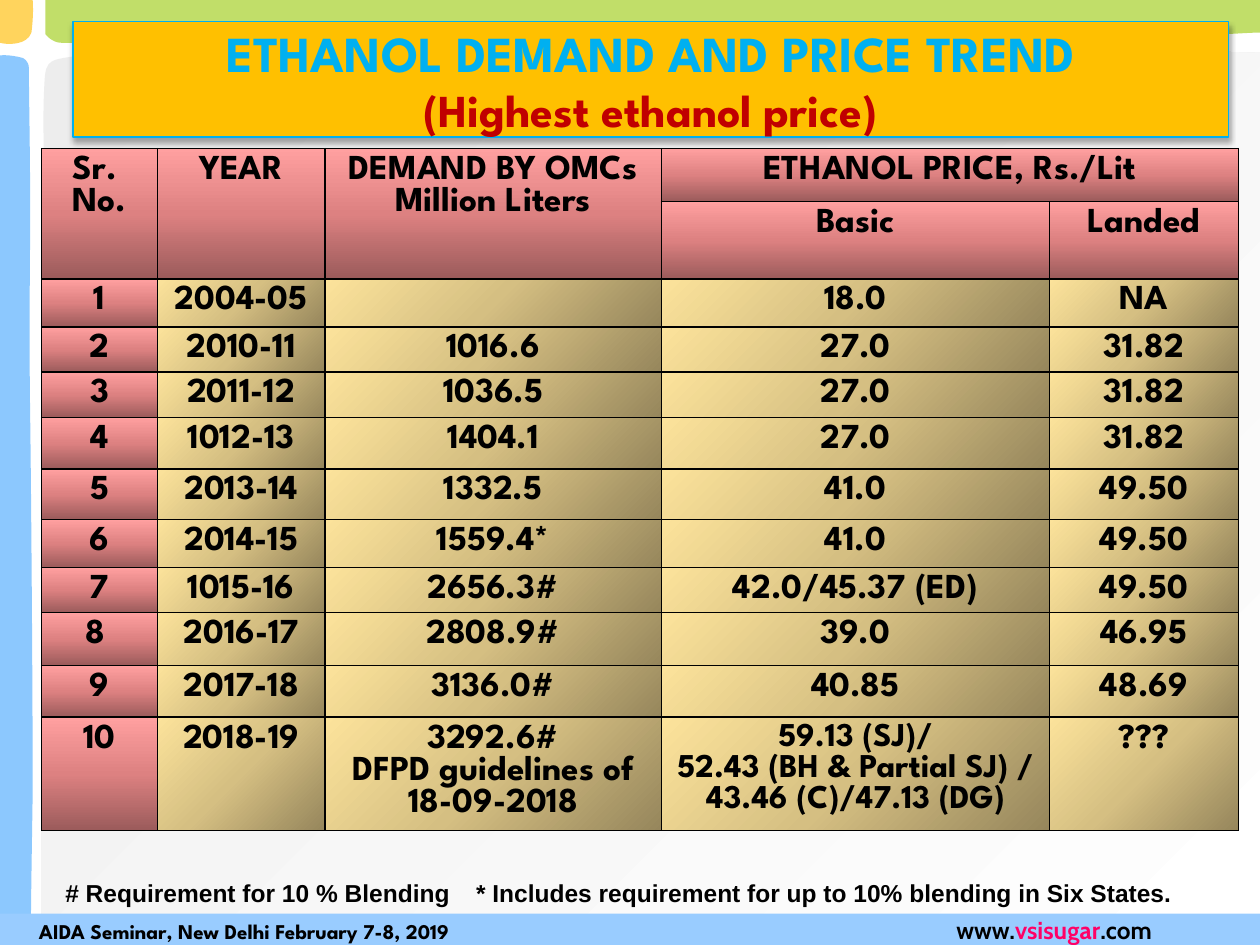
from dataclasses import dataclass

from lxml import etree
from pptx import Presentation
from pptx.dml.color import RGBColor
from pptx.enum.shapes import MSO_SHAPE
from pptx.enum.text import MSO_ANCHOR, MSO_AUTO_SIZE, PP_ALIGN
from pptx.oxml.ns import qn
from pptx.util import Inches, Pt

RECTANGLE = MSO_SHAPE.RECTANGLE
MIDDLE = MSO_ANCHOR.MIDDLE
NO_AUTOFIT = MSO_AUTO_SIZE.NONE
CENTER = PP_ALIGN.CENTER
LEFT = PP_ALIGN.LEFT


@dataclass(frozen=True)
class Theme:
    display: str = "League Spartan"
    address: str = "Cabin"
    plain: str = "Arial"
    ink: str = "000000"
    title: str = "00B0F0"
    subtitle: str = "C00000"
    title_fill: str = "FFC000"
    band: str = "99CCFF"
    accent: str = "FF0066"
    title_size: float = 28.8
    subtitle_size: float = 26.1
    table_size: float = 20
    price_size: float = 19
    note_size: float = 14
    seminar_size: float = 12


@dataclass(frozen=True)
class Gradient:
    stops: tuple[tuple[int, str], ...]
    angle: int
    opacity: int = 100


@dataclass(frozen=True)
class Outline:
    fill: Gradient | str
    start: tuple[float, float]
    segments: tuple[tuple[float, ...], ...]


THEME = Theme()
ROSE = Gradient(((0, "9B5B5B"), (50, "DD8181"), (100, "FFA0A0")), 270)
SAND = Gradient(((0, "96865C"), (50, "D5BF82"), (100, "FCE39B")), 225)
OUTLINE_OPACITY = 70
OUTLINES = (
    Outline(Gradient(((0, "E6E6E6"), (100, "FFFFFF")), 45, OUTLINE_OPACITY), (10, 7.5), (
        (10, 0.42), (8.86, 0.38, 8.55, 0.42, 7.6, 0.42),
        (6.66, 0.42, 5.5, 0.43, 4.33, 0.42), (3.16, 0.41, 1.23, 0.41, 0.57, 0.45),
        (0.36, 0.48, 0.36, 0.49, 0.35, 0.73), (0.34, 0.96, 0.35, 1.1, 0.35, 1.82),
        (0.35, 2.56, 0.34, 4.12, 0.34, 5.06), (0.34, 6.01, 0.32, 6.62, 0.33, 7.5))),
    Outline("A8D02A", (10, 0), (
        (10, 0.26), (10, 0.25, 9.28, 0.31, 8.32, 0.32),
        (7.36, 0.33, 5.31, 0.3, 4.26, 0.31), (3.21, 0.33, 2.65, 0.31, 2.03, 0.31),
        (1.4, 0.32, 0.77, 0.34, 0.49, 0.34), (0.41, 0.34, 0.36, 0.27, 0.36, 0.27),
        (0.36, 0.27, 0.36, 0.14, 0.36, 0))),
    Outline("5CB1FE", (0, 7.49), (
        (0.25, 7.5), (0.24, 7.5, 0.25, 6.98, 0.26, 6.28),
        (0.26, 5.58, 0.25, 4.07, 0.24, 3.3), (0.23, 2.54, 0.24, 2.12, 0.24, 1.67),
        (0.24, 1.21, 0.23, 0.75, 0.23, 0.54), (0.23, 0.48, 0.18, 0.46, 0.18, 0.46),
        (0.07, 0.43, 0, 0.44, 0, 0.44))),
    Outline("FFC319", (0, 0), (
        (0.26, 0), (0.27, 0.12, 0.25, 0.26, 0.25, 0.26),
        (0.23, 0.31, 0.19, 0.33, 0.15, 0.34), (0.07, 0.36, 0, 0.34, 0, 0.34))),
)

COLUMNS = (0.92, 1.33, 2.67, 3.08, 1.5)
ROWS = (0.42, 0.61, 0.38, 0.36, 0.36, 0.41, 0.4, 0.38, 0.36, 0.42, 0.41, 0.9)
MERGES = ((0, 0, 1, 0), (0, 1, 1, 1), (0, 2, 1, 2), (0, 3, 0, 4))
PRICES = (
    ("Sr. \nNo.", "YEAR", "DEMAND BY OMCs Million Liters", "ETHANOL PRICE, Rs./Lit", ""),
    ("", "", "", "Basic", "Landed"),
    ("1", "2004-05", "", "18.0", "NA"),
    ("2", "2010-11", "1016.6", "27.0", "31.82"),
    ("3", "2011-12", "1036.5", "27.0", "31.82"),
    ("4", "1012-13", "1404.1", "27.0", "31.82"),
    ("5", "2013-14", "1332.5", "41.0", "49.50"),
    ("6", "2014-15", "1559.4*", "41.0", "49.50"),
    ("7", "1015-16", "2656.3#", "42.0/45.37 (ED)", "49.50"),
    ("8 ", "2016-17", "2808.9#", "39.0", "46.95"),
    ("9", "2017-18", "3136.0#", "40.85", "48.69"),
    ("10", "2018-19", "3292.6#\nDFPD guidelines of 18-09-2018",
     "59.13 (SJ)/\n52.43 (BH & Partial SJ) / 43.46 (C)/47.13 (DG)", "???"),
)


def add_paint(parent, color: str, opacity: int = 100) -> None:
    paint = etree.SubElement(parent, qn("a:srgbClr"), val=color)
    if opacity < 100:
        etree.SubElement(paint, qn("a:alpha"), val=str(opacity * 1000))


def fill_element(fill: Gradient | str):
    if isinstance(fill, str):
        element = etree.Element(qn("a:solidFill"))
        add_paint(element, fill, OUTLINE_OPACITY)
        return element
    element = etree.Element(qn("a:gradFill"), rotWithShape="1")
    stops = etree.SubElement(element, qn("a:gsLst"))
    for position, color in fill.stops:
        stop = etree.SubElement(stops, qn("a:gs"), pos=str(position * 1000))
        add_paint(stop, color, fill.opacity)
    etree.SubElement(element, qn("a:lin"), ang=str(fill.angle * 60000), scaled="0")
    return element


def add_span(para, text: str, font: str, size: float, color: str = THEME.ink) -> None:
    span = para.add_run()
    span.text = text
    span.font.name, span.font.size, span.font.bold = font, Pt(size), True
    span.font.color.rgb = RGBColor.from_string(color)


def add_tab_stop(para, position: float) -> None:
    tabs = etree.SubElement(para._p.get_or_add_pPr(), qn("a:tabLst"))
    etree.SubElement(tabs, qn("a:tab"), pos=str(Inches(position)), algn="l")


def draw_outline(page, outline: Outline) -> None:
    builder = page.shapes.build_freeform(*map(Inches, outline.start))
    builder.add_line_segments([tuple(map(Inches, segment[-2:])) for segment in outline.segments])
    shape = builder.convert_to_shape()
    shape.line.fill.background()
    shape.shadow.inherit = False
    properties = shape._element.spPr
    properties.insert(2, fill_element(outline.fill))
    lines = list(properties.iter(qn("a:lnTo")))
    for line, segment in zip(lines, outline.segments):
        if len(segment) == 2:
            continue
        curve = etree.Element(qn("a:cubicBezTo"))
        for x, y in zip(segment[::2], segment[1::2]):
            etree.SubElement(curve, qn("a:pt"), x=str(Inches(x) - shape.left),
                             y=str(Inches(y) - shape.top))
        line.getparent().replace(line, curve)


def draw_footer(page) -> None:
    band = page.shapes.add_shape(RECTANGLE, 0, Inches(7.25), Inches(10), Inches(0.25))
    band.fill.solid()
    band.fill.fore_color.rgb = RGBColor.from_string(THEME.band)
    band.line.fill.background()
    band.shadow.inherit = False
    frame = band.text_frame
    frame.vertical_anchor = MIDDLE
    frame.margin_left = Inches(0.31)
    frame.margin_top = frame.margin_bottom = 0
    para = frame.paragraphs[0]
    para.alignment = LEFT
    add_tab_stop(para, 7.28)
    add_span(para, "AIDA Seminar, New Delhi February 7-8, 2019\t", THEME.display, THEME.seminar_size)
    for text, color in (("www.", THEME.ink), ("vsisugar", THEME.accent), (".com", THEME.ink)):
        add_span(para, text, THEME.address, THEME.note_size, color)


def draw_title(page) -> None:
    title = page.shapes.title
    title.element.getparent().append(title.element)
    title.left, title.top, title.width, title.height = map(Inches, (0.58, 0.17, 9.17, 0.92))
    title.fill.solid()
    title.fill.fore_color.rgb = RGBColor.from_string(THEME.title_fill)
    title.line.color.rgb = RGBColor.from_string(THEME.title)
    title.line.width = Pt(1)
    effects = etree.SubElement(title.element.spPr, qn("a:effectLst"))
    shadow = etree.SubElement(effects, qn("a:outerShdw"), blurRad=str(Pt(3.5)),
                              dist=str(Pt(2.2)), dir="5400000", rotWithShape="0")
    add_paint(shadow, THEME.ink, 32)
    frame = title.text_frame
    frame.auto_size = NO_AUTOFIT
    frame.vertical_anchor = MIDDLE
    para = frame.paragraphs[0]
    para.alignment = CENTER
    add_span(para, "ETHANOL DEMAND AND PRICE TREND", THEME.display, THEME.title_size, THEME.title)
    para.add_line_break()
    add_span(para, "(Highest ethanol price)", THEME.display, THEME.subtitle_size, THEME.subtitle)


def fill_cell(cell, text: str, fill: Gradient, size: float) -> None:
    cell.margin_left = cell.margin_right = Inches(0.07)
    cell.margin_top = cell.margin_bottom = Inches(0.05 if text else 0)
    for index, line in enumerate(text.split("\n") if text else ()):
        para = cell.text_frame.add_paragraph() if index else cell.text_frame.paragraphs[0]
        para.alignment = CENTER
        add_span(para, line, THEME.display, size)
    properties = cell._tc.get_or_add_tcPr()
    for side in ("a:lnL", "a:lnR", "a:lnT", "a:lnB"):
        border = etree.SubElement(properties, qn(side), w=str(Pt(1)))
        add_paint(etree.SubElement(border, qn("a:solidFill")), THEME.ink)
    properties.append(fill_element(fill))


def draw_prices(page) -> None:
    table = page.shapes.add_table(len(ROWS), len(COLUMNS), Inches(0.33), Inches(1.18),
                                  Inches(sum(COLUMNS)), Inches(sum(ROWS))).table
    table.first_row = table.horz_banding = False
    for column, width in zip(table.columns, COLUMNS):
        column.width = Inches(width)
    for row, height in zip(table.rows, ROWS):
        row.height = Inches(height)
    for top, left, bottom, right in MERGES:
        table.cell(top, left).merge(table.cell(bottom, right))
    for row, values in enumerate(PRICES):
        for column, text in enumerate(values):
            fill = ROSE if row < 2 or column == 0 else SAND
            size = THEME.price_size if (row, column) == (11, 3) else THEME.table_size
            fill_cell(table.cell(row, column), text, fill, size)


def draw_note(page) -> None:
    box = page.shapes.add_textbox(Inches(0.42), Inches(6.92), Inches(9.33), Inches(0.34))
    box.text_frame.word_wrap = True
    para = box.text_frame.paragraphs[0]
    add_tab_stop(para, 3.26)
    add_span(para, "# Requirement for 10 % Blending\t* Includes requirement for up to 10% "
             "blending in Six States.", THEME.plain, THEME.note_size)


def main() -> None:
    deck = Presentation()
    deck.slide_width, deck.slide_height = Inches(10), Inches(7.5)
    page = deck.slides.add_slide(deck.slide_layouts[5])
    for outline in OUTLINES:
        draw_outline(page, outline)
    draw_footer(page)
    draw_title(page)
    draw_prices(page)
    draw_note(page)
    deck.save("out.pptx")


if __name__ == "__main__":
    main()
